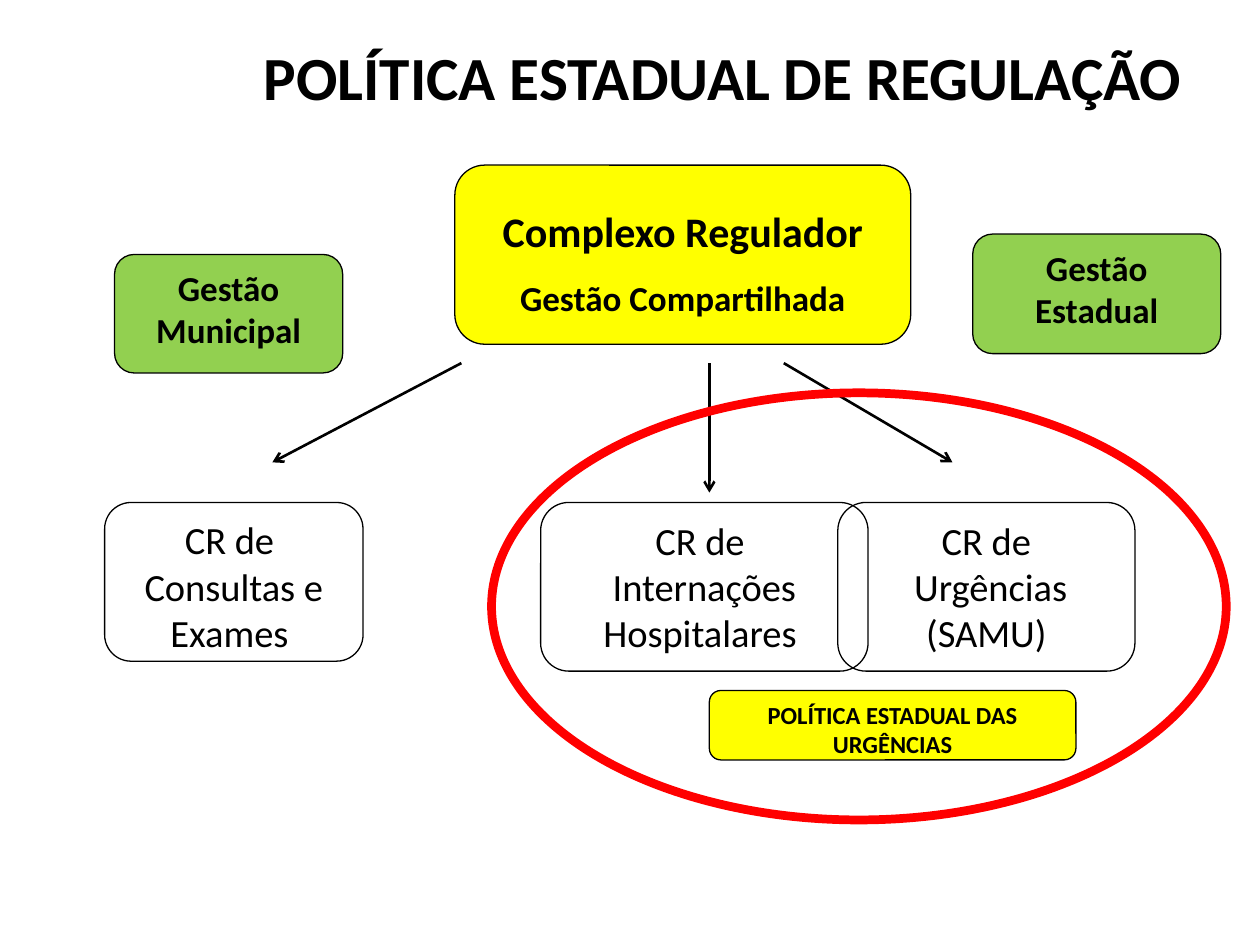
from dataclasses import dataclass

from lxml import etree
from pptx import Presentation
from pptx.dml.color import RGBColor
from pptx.enum.shapes import MSO_CONNECTOR, MSO_SHAPE
from pptx.enum.text import MSO_ANCHOR, MSO_AUTO_SIZE, PP_ALIGN
from pptx.oxml.ns import qn
from pptx.util import Cm, Pt

ROUNDED = MSO_SHAPE.ROUNDED_RECTANGLE
OVAL = MSO_SHAPE.OVAL
STRAIGHT = MSO_CONNECTOR.STRAIGHT
CENTER = PP_ALIGN.CENTER
TOP, MIDDLE = MSO_ANCHOR.TOP, MSO_ANCHOR.MIDDLE
TITLE_ONLY = 5


@dataclass(frozen=True)
class Theme:
    font: str = "Calibri"
    black: RGBColor = RGBColor(0, 0, 0)
    yellow: RGBColor = RGBColor(0xFF, 0xFF, 0)
    green: RGBColor = RGBColor(0x92, 0xD0, 0x50)
    red: RGBColor = RGBColor(0xFF, 0, 0)
    title: float = 35
    heading: float = 24
    center: float = 22
    management: float = 20
    policy: float = 14
    outline: float = 0.75
    arrow: float = 1.5
    highlight: float = 5


THEME = Theme()


def add_text(frame, text, *, size, bold=False, spacing=None, first=True):
    """Write one centred paragraph in a text frame."""
    paragraph = frame.paragraphs[0] if first else frame.add_paragraph()
    paragraph.alignment = CENTER
    if spacing:
        paragraph.line_spacing = spacing
    run = paragraph.add_run()
    run.text = text
    run.font.name = THEME.font
    run.font.size = Pt(size)
    run.font.bold = bold
    run.font.color.rgb = THEME.black


def add_outline(slide, kind, box, *, fill=None, color=THEME.black, width=THEME.outline):
    """Add an outlined shape; box is left, top, width, height in cm."""
    shape = slide.shapes.add_shape(kind, *map(Cm, box))
    shape.shadow.inherit = False
    if fill is None:
        shape.fill.background()
    else:
        shape.fill.solid()
        shape.fill.fore_color.rgb = fill
    shape.line.color.rgb = color
    shape.line.width = Pt(width)
    return shape


def add_box(slide, box, lines, *, size, fill=None, bold=False):
    """Add a rounded box with one paragraph per line."""
    shape = add_outline(slide, ROUNDED, box, fill=fill)
    frame = shape.text_frame
    frame.word_wrap = True
    frame.vertical_anchor = TOP
    for index, line in enumerate(lines):
        add_text(frame, line, size=size, bold=bold, first=index == 0)


def add_arrow(slide, start, end):
    connector = slide.shapes.add_connector(STRAIGHT, *map(Cm, start + end))
    connector.line.color.rgb = THEME.black
    connector.line.width = Pt(THEME.arrow)
    line = connector.line._get_or_add_ln()
    etree.SubElement(line, qn("a:tailEnd"), type="arrow")
    etree.SubElement(connector._element.spPr, qn("a:effectLst"))


def add_title(slide, text):
    title = slide.shapes.title
    title.left, title.top, title.width, title.height = map(Cm, (4.7, 0.33, 20.02, 2.41))
    frame = title.text_frame
    frame.word_wrap = True
    frame.auto_size = MSO_AUTO_SIZE.NONE
    frame.vertical_anchor = MIDDLE
    add_text(frame, text, size=THEME.title, bold=True)


def add_regulatory_complex(slide):
    shape = add_outline(slide, ROUNDED, (9.17, 3.33, 9.19, 3.61), fill=THEME.yellow)
    frame = shape.text_frame
    frame.word_wrap = True
    frame.vertical_anchor = TOP
    add_text(frame, "Complexo Regulador", size=THEME.heading, bold=True, spacing=1.5)
    add_text(frame, "Gestão Compartilhada", size=THEME.management, bold=True,
             spacing=1.5, first=False)


def main():
    presentation = Presentation()
    presentation.slide_width, presentation.slide_height = Cm(25.4), Cm(19.05)
    slide = presentation.slides.add_slide(presentation.slide_layouts[TITLE_ONLY])
    add_title(slide, "POLÍTICA ESTADUAL DE REGULAÇÃO ")

    # Regulatory complex and its arrows
    add_regulatory_complex(slide)
    arrow_top = 7.32
    for start_x, end in ((9.3, (5.49, 9.32)), (14.3, (14.3, 9.93)), (15.8, (19.2, 9.32))):
        add_arrow(slide, (start_x, arrow_top), end)

    # Regulation centres
    center_top = 10.13
    for left, width, height, lines in (
        (2.11, 5.21, 3.2, ("CR de ", "Consultas e Exames ")),
        (10.9, 6.6, 3.4, ("CR de ", "Internações Hospitalares ")),
        (16.89, 5.99, 3.4, ("CR de", " Urgências (SAMU)")),
    ):
        add_box(slide, (left, center_top, width, height), lines, size=THEME.center)

    # Ellipse around the urgent care policy
    add_outline(slide, OVAL, (9.91, 7.92, 14.81, 8.61),
                color=THEME.red, width=THEME.highlight)

    # Management levels and policy label
    for box, text, fill, size in (
        ((19.61, 4.72, 5, 2.41), "Gestão Estadual", THEME.green, THEME.management),
        ((2.31, 5.13, 4.6, 2.39), "Gestão Municipal", THEME.green, THEME.management),
        ((14.3, 13.92, 7.39, 1.4), "POLÍTICA ESTADUAL DAS URGÊNCIAS",
         THEME.yellow, THEME.policy),
    ):
        add_box(slide, box, (text,), size=size, fill=fill, bold=True)

    presentation.save("out.pptx")


if __name__ == "__main__":
    main()
